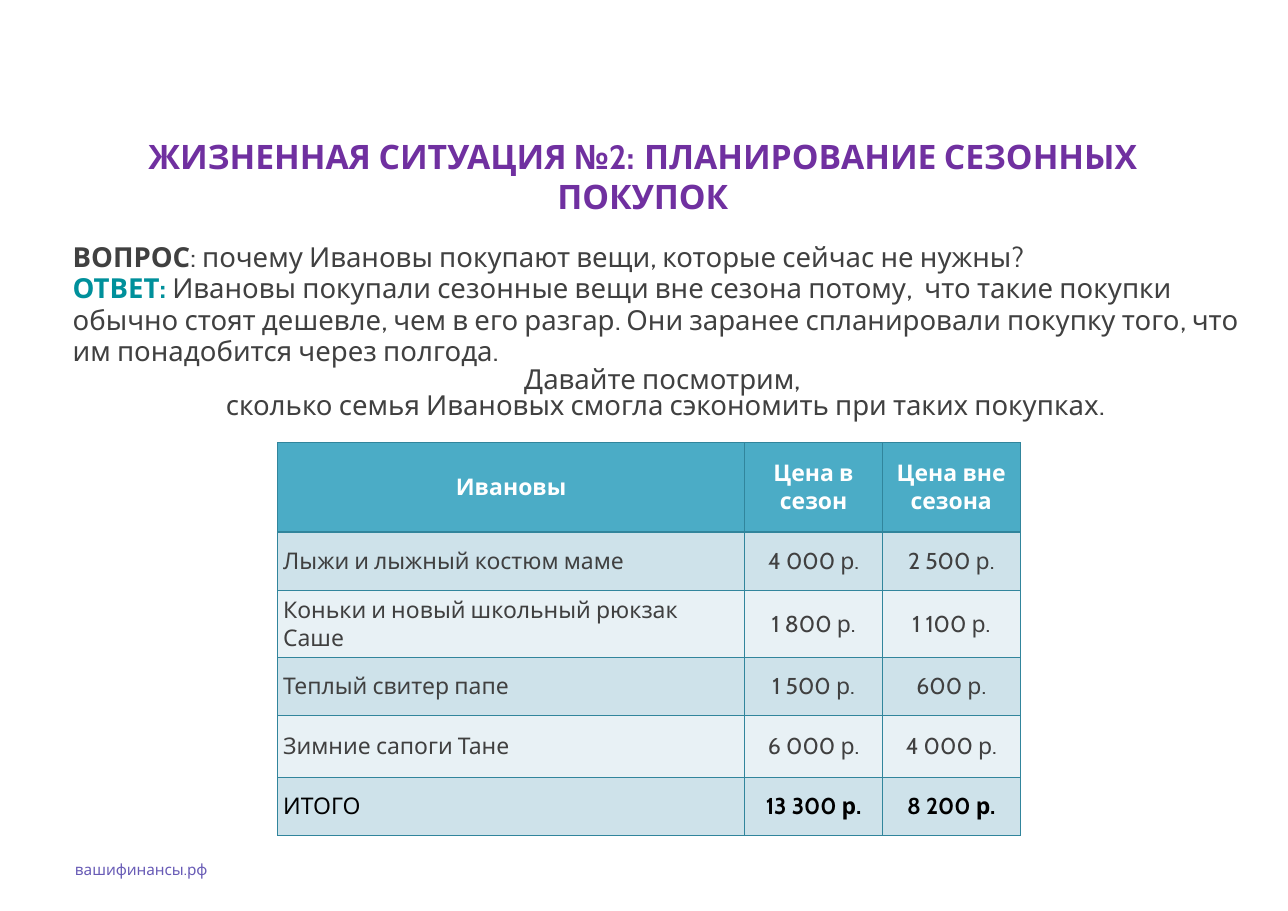
"""Build the slide on planning seasonal purchases."""
from dataclasses import dataclass

from pptx import Presentation
from pptx.dml.color import RGBColor as RGB
from pptx.enum.text import MSO_ANCHOR as ANCHOR, MSO_AUTO_SIZE as FIT, PP_ALIGN as ALIGN
from pptx.oxml import parse_xml
from pptx.oxml.ns import nsdecls
from pptx.util import Inches, Pt

TITLE = "ЖИЗНЕННАЯ СИТУАЦИЯ №2: \tПЛАНИРОВАНИЕ СЕЗОННЫХ ПОКУПОК"
QUESTION = ("ВОПРОС", ": почему Ивановы покупают вещи, которые сейчас не нужны?")
ANSWER = ("ОТВЕТ: ", "Ивановы покупали сезонные вещи вне сезона потому,  что такие "
          "покупки обычно стоят дешевле, чем в его разгар. Они заранее спланировали "
          "покупку того, что им понадобится через полгода.")
INVITATION = ("Давайте посмотрим, ",
              "сколько семья Ивановых смогла сэкономить при таких покупках.")
SITE = "вашифинансы.рф"
PRICES = [
    ("Ивановы", "Цена в сезон", "Цена вне сезона"),
    ("Лыжи и лыжный костюм маме", "4 000 р.", "2 500 р."),
    ("Коньки и новый школьный рюкзак Саше", "1 800 р.", "1 100 р."),
    ("Теплый свитер папе", "1 500 р.", "600 р."),
    ("Зимние сапоги Тане", "6 000 р.", "4 000 р."),
    ("ИТОГО", "13 300 р.", "8 200 р."),
]
COLUMNS = (4.24, 1.25, 1.25)
ROWS = (0.81, 0.53, 0.53, 0.53, 0.56, 0.53)


@dataclass(frozen=True)
class Theme:
    """Colours and type sizes."""
    font: str = "Cabin"
    title: str = "7030A0"
    text: str = "404040"
    answer: str = "00909B"
    site: str = "685BB6"
    white: str = "FFFFFF"
    total: str = "000000"
    header: str = "4BACC6"
    bands: tuple = ("E8F1F5", "CEE2EA")
    border: str = "31859C"
    title_size: int = 22
    text_size: int = 18
    table_size: int = 15
    site_size: int = 10


T = Theme()


def style(font, size, color, bold=False):
    """Format the font of a paragraph."""
    font.name, font.size, font.bold = T.font, Pt(size), bold
    font.color.rgb = RGB.from_string(color)


def set_frame(tf, anchor=ANCHOR.TOP, side=0.05):
    """Set wrapping, anchor and insets of a text frame."""
    tf.word_wrap, tf.auto_size, tf.vertical_anchor = True, FIT.NONE, anchor
    tf.margin_left = tf.margin_right = Inches(side)
    tf.margin_top = tf.margin_bottom = Inches(0.05)


def add_text(slide, box, **frame):
    """Add a text box and return its frame."""
    tf = slide.shapes.add_textbox(*map(Inches, box)).text_frame
    set_frame(tf, **frame)
    return tf


def add_title(slide):
    """Place and format the title."""
    s = slide.shapes.title
    s.left, s.top, s.width, s.height = map(Inches, (0.56, 1.18, 10.55, 1.17))
    set_frame(s.text_frame)
    p = s.text_frame.paragraphs[0]
    p.add_run().text = TITLE
    p.alignment = ALIGN.CENTER
    style(p.font, T.title_size, T.title, True)


def add_story(slide):
    """Add the question, the answer and the invitation."""
    tf = add_text(slide, (0.61, 2.13, 10.86, 2.21))
    lines = [(QUESTION, T.text, 1, ALIGN.LEFT), (ANSWER, T.answer, 0.96, ALIGN.LEFT)]
    lines += [((None, line), T.text, 0.8, ALIGN.CENTER) for line in INVITATION]
    for i, ((lead, body), color, spacing, align) in enumerate(lines):
        p = tf.add_paragraph() if i else tf.paragraphs[0]
        p.alignment, p.line_spacing = align, spacing
        style(p.font, T.text_size, T.text)
        if lead:
            r = p.add_run()
            r.text = lead
            r.font.bold = True
            r.font.color.rgb = RGB.from_string(color)
        p.add_run().text = body


def add_borders(cell):
    """Outline a cell on all four sides."""
    for side in "LRTB":
        cell._tc.get_or_add_tcPr().append(parse_xml(
            f'<a:ln{side} {nsdecls("a")} w="{Pt(0.96)}"><a:solidFill>'
            f'<a:srgbClr val="{T.border}"/></a:solidFill></a:ln{side}>'))


def add_prices(slide):
    """Add the price table."""
    box = (2.52, 4.02, sum(COLUMNS), sum(ROWS))
    table = slide.shapes.add_table(len(ROWS), len(COLUMNS), *map(Inches, box)).table
    for column, width in zip(table.columns, COLUMNS):
        column.width = Inches(width)
    for i, (height, values) in enumerate(zip(ROWS, PRICES)):
        table.rows[i].height = Inches(height)
        head, total = i == 0, i == len(ROWS) - 1
        color = T.white if head else T.total if total else T.text
        for j, value in enumerate(values):
            cell = table.cell(i, j)
            cell.vertical_anchor = ANCHOR.MIDDLE
            cell.margin_left = cell.margin_right = Inches(0.05)
            cell.margin_top = cell.margin_bottom = Inches(0.05)
            add_borders(cell)
            cell.fill.solid()
            cell.fill.fore_color.rgb = RGB.from_string(T.header if head else T.bands[i % 2])
            p = cell.text_frame.paragraphs[0]
            p.add_run().text = value
            p.alignment = ALIGN.CENTER if head or j else ALIGN.LEFT
            style(p.font, T.table_size, color, head or (total and j > 0))


def add_site(slide):
    """Add the web address at the foot."""
    tf = add_text(slide, (0.57, 7.67, 3.97, 0.44), anchor=ANCHOR.MIDDLE, side=0.11)
    p = tf.paragraphs[0]
    p.add_run().text = SITE
    style(p.font, T.site_size, T.site)


def main():
    """Build and save the slide."""
    prs = Presentation()
    prs.slide_width, prs.slide_height = Inches(11.69), Inches(8.27)
    slide = prs.slides.add_slide(prs.slide_layouts[5])
    for add in (add_site, add_title, add_story, add_prices):
        add(slide)
    prs.save("out.pptx")


if __name__ == "__main__":
    main()
